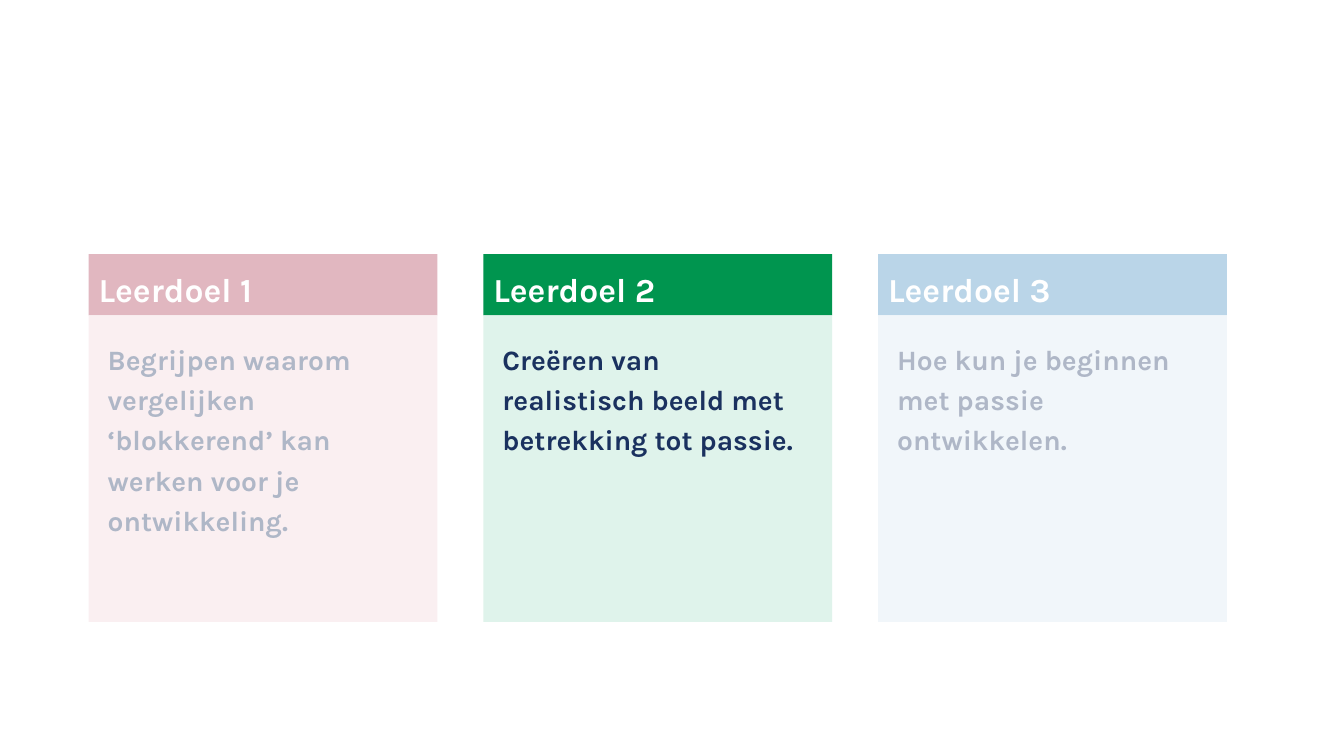
from pptx import Presentation
from pptx.dml.color import RGBColor
from pptx.enum.shapes import MSO_SHAPE as Shape
from pptx.enum.text import MSO_ANCHOR as Anchor
from pptx.oxml.ns import qn
from pptx.util import Inches, Pt
from lxml import etree

# Content: heading, goal, header colour, panel colour, veil top (None = active goal)
GOALS = [
    ("Leerdoel 1",
     "Begrijpen waarom vergelijken ‘blokkerend’ kan werken voor je ontwikkeling.",
     "AA334D", "F2D3D9", 2.41),
    ("Leerdoel 2",
     "Creëren van realistisch beeld met betrekking tot passie.",
     "00954F", "DFF3EB", None),
    ("Leerdoel 3",
     "Hoe kun je beginnen met passie ontwikkelen.",
     "3C89BE", "D7E7F3", 2.44),
]
FONT, WHITE, NAVY = "Karla", "FFFFFF", "1A315F"

# Card layout in inches
LEFT, PITCH, WIDTH = 0.88, 3.915, 3.46
HEADER_TOP, PANEL_TOP, BOTTOM = 2.52, 3.13, 6.17
GOAL_TOP, GOAL_INDENT, GOAL_WIDTH = 3.28, 0.09, 3.2
VEIL_MARGIN, VEIL_HEIGHT, VEIL_OPACITY = 0.1, 3.77, 65


def color(hex_code):
    return RGBColor.from_string(hex_code)


def add_block(slide, left, top, width, height, fill):
    block = slide.shapes.add_shape(
        Shape.RECTANGLE, Inches(left), Inches(top), Inches(width), Inches(height))
    block.shadow.inherit = False
    block.fill.solid()
    block.fill.fore_color.rgb = color(fill)
    block.line.fill.background()
    return block


def add_text(slide, left, top, width, height, text, size, ink, anchor):
    frame = slide.shapes.add_textbox(
        Inches(left), Inches(top), Inches(width), Inches(height)).text_frame
    frame.word_wrap = True
    frame.vertical_anchor = anchor
    frame.text = text
    paragraph = frame.paragraphs[0]
    paragraph.line_spacing = 1.2
    font = paragraph.runs[0].font
    font.name, font.size, font.bold = FONT, Pt(size), True
    font.color.rgb = color(ink)


def add_veil(slide, left, top):
    veil = add_block(slide, left - VEIL_MARGIN, top,
                     WIDTH + 2 * VEIL_MARGIN, VEIL_HEIGHT, WHITE)
    fill_color = veil.fill._xPr.find(qn("a:solidFill"))[0]
    etree.SubElement(fill_color, qn("a:alpha"), val=str(VEIL_OPACITY * 1000))


def main():
    deck = Presentation()
    deck.slide_width, deck.slide_height = Inches(13.33), Inches(7.5)
    slide = deck.slides.add_slide(deck.slide_layouts[6])

    for column, (heading, goal, header_fill, panel_fill, veil_top) in enumerate(GOALS):
        left = LEFT + column * PITCH
        header_height = PANEL_TOP - HEADER_TOP

        # Card
        add_block(slide, left, HEADER_TOP, WIDTH, header_height, header_fill)
        add_block(slide, left, PANEL_TOP, WIDTH, BOTTOM - PANEL_TOP, panel_fill)

        # Heading and goal
        add_text(slide, left, HEADER_TOP, WIDTH, header_height,
                 heading, 24, WHITE, Anchor.MIDDLE)
        add_text(slide, left + GOAL_INDENT, GOAL_TOP, GOAL_WIDTH, BOTTOM - GOAL_TOP,
                 goal, 20, NAVY, Anchor.TOP)

        # Veil over the goals that are not active
        if veil_top is not None:
            add_veil(slide, left, veil_top)

    deck.save("out.pptx")


if __name__ == "__main__":
    main()
